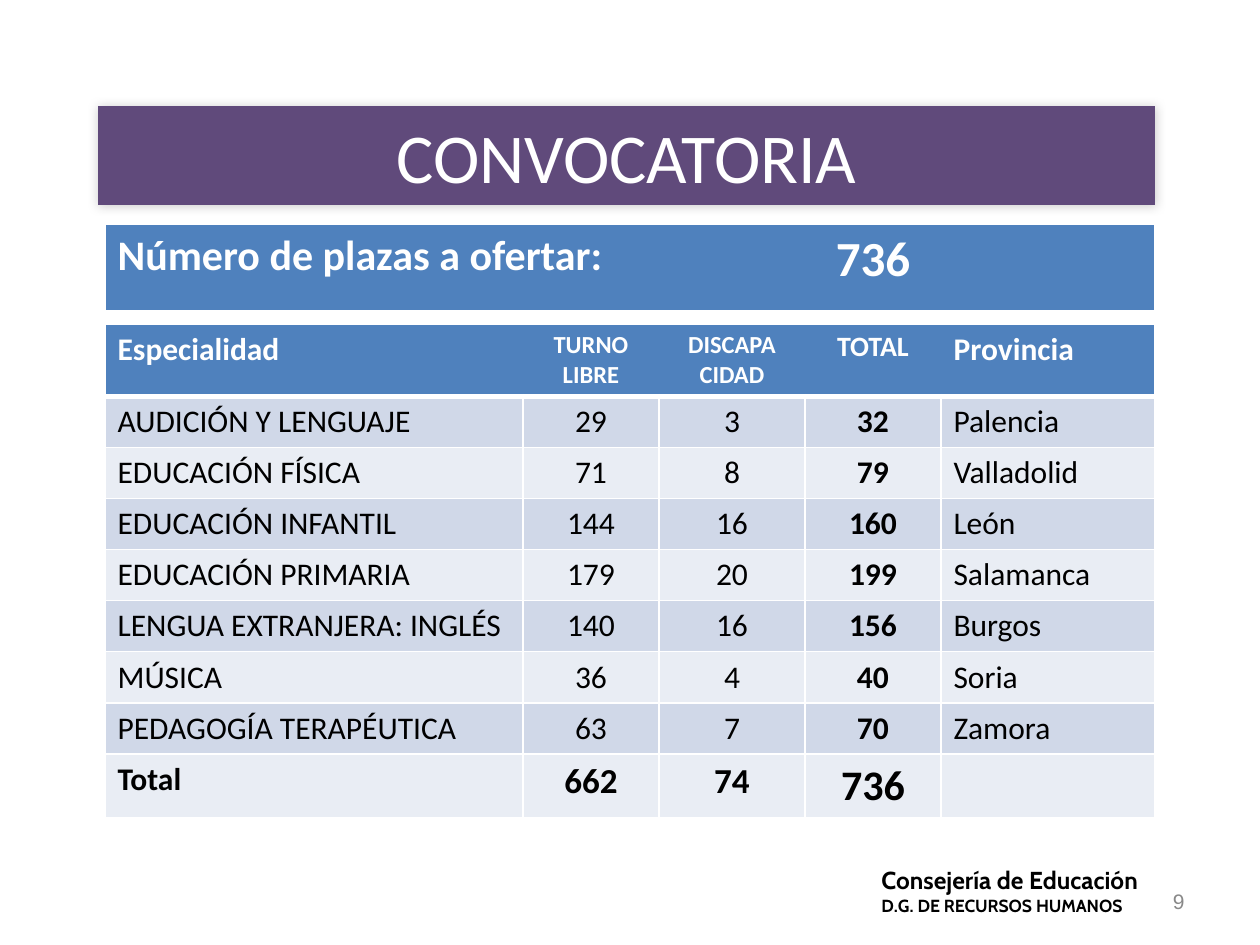
from dataclasses import dataclass
from lxml import etree
from pptx import Presentation, util as u
from pptx.dml.color import RGBColor
from pptx.enum import text as t
from pptx.oxml import parse_xml
from pptx.oxml.ns import qn

NS = 'xmlns:a="http://schemas.openxmlformats.org/drawingml/2006/main"'
SCALE = 914400 / 126  # EMU in one px
LEFT, MID, RIGHT = t.PP_ALIGN.LEFT, t.PP_ALIGN.CENTER, t.PP_ALIGN.RIGHT


@dataclass(frozen=True)
class Theme:
    font: str = "Calibri"
    brand: str = "Cabin"
    plain: str = "Arial"
    white: str = "FFFFFF"
    black: str = "000000"
    gray: str = "898989"
    plum: str = "604A7B"
    blue: str = "4F81BD"
    bands: tuple = ("D0D8E8", "E9EDF4")
    title: int = 40
    huge: int = 28
    large: int = 24
    sum: int = 20
    body: int = 18
    mid: int = 16
    small: int = 14
    num: int = 12
    tiny: int = 10


def px(n):
    return u.Emu(round(n * SCALE))


class Deck:
    def __init__(self, theme, wide, high):
        self.theme = theme
        self.prs = Presentation()
        self.prs.slide_width, self.prs.slide_height = px(wide), px(high)
        self.slide = self.prs.slides.add_slide(self.prs.slide_layouts[5])

    def put(self, para, words, size, color, bold=False, align=LEFT, font=None):
        para.text = words
        para.alignment = align
        look = {"size": u.Pt(size), "bold": bold, "name": font or self.theme.font}
        for key, val in look.items():
            setattr(para.runs[0].font, key, val)
        para.runs[0].font.color.rgb = RGBColor.from_string(color)

    def title(self, words, box):
        th, shape = self.theme, self.slide.shapes.title
        for key, val in zip(("left", "top", "width", "height"), box):
            setattr(shape, key, px(val))
        props = shape.element.spPr
        props.append(parse_xml(f'<a:prstGeom {NS} prst="roundRect"><a:avLst/></a:prstGeom>'))
        shape.fill.solid()
        shape.fill.fore_color.rgb = RGBColor.from_string(th.plum)
        shape.line.fill.background()
        # Soft shadow
        props.append(parse_xml(
            f'<a:effectLst {NS}><a:outerShdw blurRad="{u.Pt(6)}" dist="0" dir="13500000">'
            f'<a:srgbClr val="{th.black}"><a:alpha val="20000"/></a:srgbClr>'
            '</a:outerShdw></a:effectLst>'))
        frame = shape.text_frame
        frame.auto_size = t.MSO_AUTO_SIZE.NONE
        frame.vertical_anchor = t.MSO_ANCHOR.MIDDLE
        self.put(frame.paragraphs[0], words, th.title, th.white, align=MID)

    def label(self, lines, box, anchor=t.MSO_ANCHOR.TOP, fit=t.MSO_AUTO_SIZE.NONE):
        frame = self.slide.shapes.add_textbox(*map(px, box)).text_frame
        look = {"word_wrap": True, "vertical_anchor": anchor, "auto_size": fit}
        for key, val in look.items():
            setattr(frame, key, val)
        for i, line in enumerate(lines):
            para = frame.add_paragraph() if i else frame.paragraphs[0]
            self.put(para, **line)

    def edge(self, cell, widths):
        props = cell._tc.get_or_add_tcPr()
        for side, width in zip("LRTB", widths):
            line = etree.SubElement(props, qn(f"a:ln{side}"), w=str(u.Pt(width)))
            if width:
                fill = etree.SubElement(line, qn("a:solidFill"))
                etree.SubElement(fill, qn("a:srgbClr"), val=self.theme.white)
            else:
                etree.SubElement(line, qn("a:noFill"))

    def table(self, left, top, cols, rows, data, style):
        th = self.theme
        grid = self.slide.shapes.add_table(
            len(rows), len(cols), px(left), px(top), px(sum(cols)), px(sum(rows))).table
        grid.first_row = grid.horz_banding = False
        for col, width in zip(grid.columns, cols):
            col.width = px(width)
        for row, high in zip(grid.rows, rows):
            row.height = px(high)
        for r, row in enumerate(data):
            for c, words in enumerate(row):
                cell = grid.cell(r, c)
                if r:
                    self.edge(cell, (1, 1, 3 if r == 1 else 1, 1))
                else:
                    self.edge(cell, (int(c == 0), int(c == len(cols) - 1), 1, 3))
                cell.fill.solid()
                shade = th.bands[(r - 1) % 2] if r else th.blue
                cell.fill.fore_color.rgb = RGBColor.from_string(shade)
                if words:
                    color = th.black if r else th.white
                    self.put(cell.text_frame.paragraphs[0], words,
                             color=color, **style(r, c))


def main():
    th = Theme()
    deck = Deck(th, 1260, 945)

    # Heading
    deck.title("CONVOCATORIA", (98, 106, 1057, 99))

    # Number of places
    def offer(r, c):
        return {"size": (th.large, th.huge)[c], "bold": True, "align": (LEFT, MID)[c]}

    deck.table(105, 224, (700, 136, 214), (88,),
               [("Número de plazas a ofertar:", "736", "")], offer)

    # Places by subject
    data = [
        ("Especialidad", "TURNO LIBRE", "DISCAPA CIDAD", "TOTAL", "Provincia"),
        ("AUDICIÓN Y LENGUAJE", "29", "3", "32", "Palencia"),
        ("EDUCACIÓN FÍSICA", "71", "8", "79", "Valladolid"),
        ("EDUCACIÓN INFANTIL", "144", "16", "160", "León"),
        ("EDUCACIÓN PRIMARIA", "179", "20", "199", "Salamanca"),
        ("LENGUA EXTRANJERA: INGLÉS", "140", "16", "156", "Burgos"),
        ("MÚSICA", "36", "4", "40", "Soria"),
        ("PEDAGOGÍA TERAPÉUTICA", "63", "7", "70", "Zamora"),
        ("Total", "662", "74", "736", ""),
    ]
    last = len(data) - 1
    sizes = {0: (th.body, th.small, th.small, th.mid, th.body),
             last: (th.body, th.sum, th.sum, th.large, th.body)}

    def subject(r, c):
        return {"size": sizes[r][c] if r in sizes else th.body,
                "bold": r in sizes or c == 3,
                "align": MID if c in (1, 2, 3) else LEFT}

    deck.table(105, 324, (418, 136, 146, 136, 214), (72, *[51] * 7, 63), data, subject)

    # Footer
    sign = {"color": th.black, "bold": True, "font": th.brand}
    deck.label([{"words": "Consejería de Educación", "size": th.small, **sign},
                {"words": "D.G. DE RECURSOS HUMANOS", "size": th.tiny, **sign}],
               (869, 859, 307, 64), fit=t.MSO_AUTO_SIZE.SHAPE_TO_FIT_TEXT)
    deck.label([{"words": "9", "size": th.num, "color": th.gray,
                 "align": RIGHT, "font": th.plain}],
               (903, 876, 294, 50), anchor=t.MSO_ANCHOR.MIDDLE)

    deck.prs.save("out.pptx")


if __name__ == "__main__":
    main()
